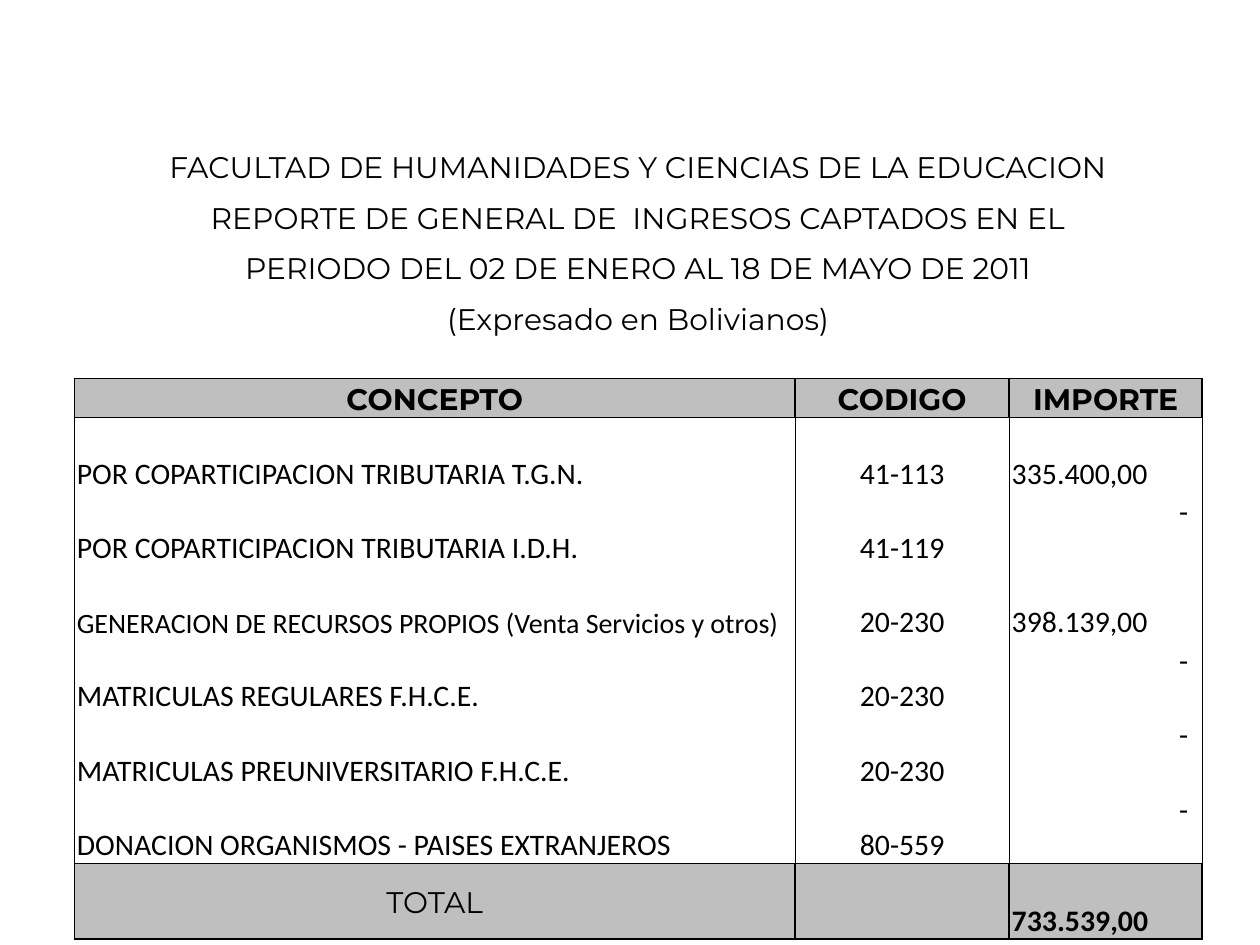
from lxml import etree
from pptx import Presentation
from pptx.dml.color import RGBColor
from pptx.enum.text import MSO_ANCHOR, PP_ALIGN
from pptx.oxml.ns import qn
from pptx.util import Inches, Pt

LEFT, CENTER, RIGHT = PP_ALIGN.LEFT, PP_ALIGN.CENTER, PP_ALIGN.RIGHT
TOP, MIDDLE, BOTTOM = MSO_ANCHOR.TOP, MSO_ANCHOR.MIDDLE, MSO_ANCHOR.BOTTOM
COLORS = {"text": "000000", "line": "000000", "band": "BFBFBF"}
HEADING_FONT, BODY_FONT = "Montserrat", "Calibri"

HEADINGS = [
    "FACULTAD DE HUMANIDADES Y CIENCIAS DE LA EDUCACION",
    "REPORTE DE GENERAL DE  INGRESOS CAPTADOS EN EL",
    "PERIODO DEL 02 DE ENERO AL 18 DE MAYO DE 2011",
    "(Expresado en Bolivianos)",
]
COLUMN_NAMES = ["CONCEPTO", "CODIGO", "IMPORTE"]
INCOME = [
    ("POR COPARTICIPACION TRIBUTARIA T.G.N.", "41-113", "335.400,00"),
    ("POR COPARTICIPACION TRIBUTARIA I.D.H.", "41-119", "-"),
    ("GENERACION DE RECURSOS PROPIOS (Venta Servicios y otros)", "20-230", "398.139,00"),
    ("MATRICULAS REGULARES F.H.C.E.", "20-230", "-"),
    ("MATRICULAS PREUNIVERSITARIO F.H.C.E.", "20-230", "-"),
    ("DONACION ORGANISMOS - PAISES EXTRANJEROS", "80-559", "-"),
]
COLUMN_WIDTHS = [5.72, 1.7, 1.53]
ROW_HEIGHTS = [0.4] * len(HEADINGS) + [0.32, 0.31] + [0.59] * len(INCOME) + [0.6]
SPACER = len(HEADINGS)
HEADER, FIRST_INCOME, TOTAL = SPACER + 1, SPACER + 2, len(ROW_HEIGHTS) - 1


def write(cell, text, font=BODY_FONT, size=17, bold=False, align=LEFT,
          anchor=BOTTOM, right=0.02):
    cell.margin_left = cell.margin_top = Inches(0.02)
    cell.margin_right, cell.margin_bottom = Inches(right), Inches(0)
    cell.vertical_anchor = anchor
    paragraph = cell.text_frame.paragraphs[0]
    paragraph.alignment = align
    if text:
        run = paragraph.add_run()
        run.text = text
        run.font.name, run.font.size, run.font.bold = font, Pt(size), bold
        run.font.color.rgb = RGBColor.from_string(COLORS["text"])


def frame(cell, left=0, right=0, top=0, bottom=0, fill=None):
    if fill:
        cell.fill.solid()
        cell.fill.fore_color.rgb = RGBColor.from_string(fill)
    else:
        cell.fill.background()
    properties = cell._tc.get_or_add_tcPr()
    sides = [("a:lnL", left), ("a:lnR", right), ("a:lnT", top), ("a:lnB", bottom)]
    for position, (tag, width) in enumerate(sides):
        line = etree.Element(qn(tag), w=str(Pt(width)))
        if width:
            paint = etree.SubElement(line, qn("a:solidFill"))
            etree.SubElement(paint, qn("a:srgbClr"), val=COLORS["line"])
        else:
            etree.SubElement(line, qn("a:noFill"))
        properties.insert(position, line)


presentation = Presentation()
presentation.slide_width, presentation.slide_height = Inches(10), Inches(7.5)
slide = presentation.slides.add_slide(presentation.slide_layouts[6])

# Table grid
report = slide.shapes.add_table(
    len(ROW_HEIGHTS), len(COLUMN_WIDTHS), Inches(0.59), Inches(1.08),
    Inches(sum(COLUMN_WIDTHS)), Inches(sum(ROW_HEIGHTS))).table
report.first_row = report.horz_banding = False
for column, width in zip(report.columns, COLUMN_WIDTHS):
    column.width = Inches(width)
for row, height in zip(report.rows, ROW_HEIGHTS):
    row.height = Inches(height)

# Report heading across all columns
for row, heading in enumerate(HEADINGS):
    report.cell(row, 0).merge(report.cell(row, 2))
    write(report.cell(row, 0), heading, font=HEADING_FONT, align=CENTER)
    for column in range(3):
        frame(report.cell(row, column))

# Spacer and column names
for column, name in enumerate(COLUMN_NAMES):
    write(report.cell(SPACER, column), "")
    frame(report.cell(SPACER, column), bottom=1)
    header = report.cell(HEADER, column)
    write(header, name, font=HEADING_FONT, bold=True, align=CENTER, anchor=MIDDLE)
    frame(header, left=1, right=1, top=1, bottom=1, fill=COLORS["band"])

# Income rows: figures sit at the bottom left, dashes at the top right
for row, (concept, code, amount) in enumerate(INCOME, FIRST_INCOME):
    write(report.cell(row, 0), concept, size=16 if len(concept) > 50 else 17)
    write(report.cell(row, 1), code, align=CENTER)
    if amount == "-":
        write(report.cell(row, 2), amount, align=RIGHT, anchor=TOP, right=0.11)
    else:
        write(report.cell(row, 2), amount)
    for column in range(3):
        frame(report.cell(row, column), left=0.5, right=0.5,
              top=1 if row == FIRST_INCOME else 0,
              bottom=0.5 if row == TOTAL - 1 else 0)

# Total
write(report.cell(TOTAL, 0), "TOTAL", font=HEADING_FONT, align=CENTER, anchor=MIDDLE)
write(report.cell(TOTAL, 1), "")
write(report.cell(TOTAL, 2), "733.539,00", bold=True)
for column in range(3):
    frame(report.cell(TOTAL, column), left=1, right=1, top=0.5, bottom=1,
          fill=COLORS["band"])

presentation.save("out.pptx")
